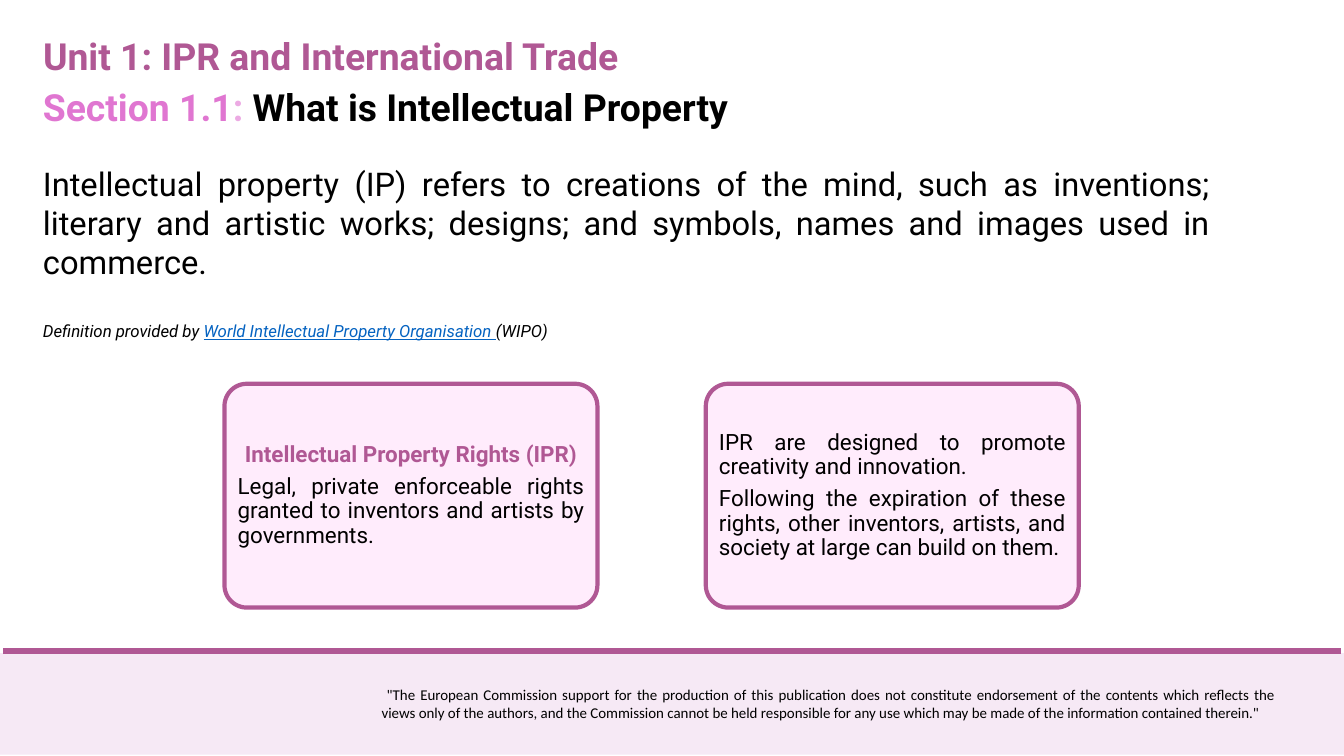
from lxml.etree import SubElement
from pptx import Presentation
from pptx.dml.color import RGBColor
from pptx.enum.shapes import MSO_CONNECTOR, MSO_SHAPE
from pptx.enum.text import MSO_ANCHOR, MSO_AUTO_SIZE, PP_ALIGN
from pptx.oxml.ns import qn
from pptx.util import Pt

BLACK = RGBColor(0x00, 0x00, 0x00)
PLUM = RGBColor(0xB0, 0x58, 0x94)
ORCHID = RGBColor(0xE0, 0x76, 0xD1)
PALE_ORCHID = RGBColor(0xEC, 0xAA, 0xE3)
CARD_PINK = RGBColor(0xFF, 0xEC, 0xFC)
FOOTER_PINK = RGBColor(0xF6, 0xE9, 0xF5)
LINK_BLUE = RGBColor(0x05, 0x63, 0xC1)

LEFT, CENTER, JUSTIFY = PP_ALIGN.LEFT, PP_ALIGN.CENTER, PP_ALIGN.JUSTIFY

SLIDE_WIDTH, SLIDE_HEIGHT = 1440, 810
MARGIN = 38.9

UNIT_TITLE = [
    {"size": 40, "bold": True, "runs": [("Unit 1: IPR and International Trade", PLUM)]},
]
SECTION_TITLE = [
    {"size": 40, "bold": True, "runs": [
        ("Section 1.1", ORCHID),
        (": ", PALE_ORCHID),
        ("What is Intellectual Property", BLACK),
    ]},
]
DEFINITION = [
    {"size": 35, "align": JUSTIFY, "runs": [
        ("Intellectual property (IP) refers to creations of the mind, such as inventions; "
         "literary and artistic works; designs; and symbols, names and images used in commerce.", BLACK),
    ]},
    {"size": 18, "align": JUSTIFY, "italic": True, "before": 42, "runs": [
        ("Definition provided by ", BLACK),
        ("World Intellectual Property Organisation ", LINK_BLUE),
        ("(WIPO)", BLACK),
    ]},
]
DISCLAIMER = [
    {"size": 16, "align": JUSTIFY, "font": "Calibri", "runs": [
        (" \"The European Commission support for the production of this publication does not "
         "constitute endorsement of the contents which reflects the views only of the authors, "
         "and the Commission cannot be held responsible for any use which may be made of the "
         "information contained therein.\"", BLACK),
    ]},
]
CARD_STYLE = {"size": 24, "align": JUSTIFY, "spacing": 0.9, "after": 8.4}
CARDS = [
    [
        {**CARD_STYLE, "align": CENTER, "bold": True,
         "runs": [("Intellectual Property Rights (IPR)", PLUM)]},
        {**CARD_STYLE, "runs": [
            ("Legal, private enforceable rights granted to inventors and artists by governments.", BLACK)]},
    ],
    [
        {**CARD_STYLE, "runs": [("IPR are designed to promote creativity and innovation.", BLACK)]},
        {**CARD_STYLE, "runs": [
            ("Following the expiration of these rights, other inventors, artists, "
             "and society at large can build on them.", BLACK)]},
    ],
]

CARD_LEFT, CARD_TOP, CARD_WIDTH, CARD_HEIGHT, CARD_STEP = 240.5, 411.2, 399.6, 239.8, 515.7
FOOTER_TOP, FOOTER_HEIGHT = 699.8, 108.7
RULE_Y, RULE_INSET = 697.7, 3.6


def write(text_frame, paragraphs, anchor=MSO_ANCHOR.TOP, auto_size=MSO_AUTO_SIZE.SHAPE_TO_FIT_TEXT):
    text_frame.word_wrap = True
    text_frame.auto_size = auto_size
    text_frame.vertical_anchor = anchor
    for index, content in enumerate(paragraphs):
        paragraph = text_frame.add_paragraph() if index else text_frame.paragraphs[0]
        paragraph.alignment = content.get("align", LEFT)
        paragraph.line_spacing = content.get("spacing", 1.0)
        paragraph.space_before = Pt(content.get("before", 0))
        paragraph.space_after = Pt(content.get("after", 0))
        for text, color in content["runs"]:
            run = paragraph.add_run()
            run.text = text
            run.font.name = content.get("font", "Roboto")
            run.font.size = Pt(content["size"])
            run.font.bold = content.get("bold", False)
            run.font.italic = content.get("italic", False)
            run.font.underline = color == LINK_BLUE
            run.font.color.rgb = color


def add_text(slide, left, top, width, height, paragraphs):
    box = slide.shapes.add_textbox(Pt(left), Pt(top), Pt(width), Pt(height))
    write(box.text_frame, paragraphs)


def paint(shape, fill, line=None, line_width=0):
    shape.shadow.inherit = False
    shape.fill.solid()
    shape.fill.fore_color.rgb = fill
    if line is None:
        shape.line.fill.background()
    else:
        shape.line.color.rgb = line
        shape.line.width = Pt(line_width)


def add_footer(slide):
    band = slide.shapes.add_shape(
        MSO_SHAPE.RECTANGLE, 0, Pt(FOOTER_TOP), Pt(SLIDE_WIDTH), Pt(FOOTER_HEIGHT))
    paint(band, FOOTER_PINK)
    rule = slide.shapes.add_connector(
        MSO_CONNECTOR.STRAIGHT, Pt(RULE_INSET), Pt(RULE_Y), Pt(SLIDE_WIDTH - RULE_INSET), Pt(RULE_Y))
    rule.line.color.rgb = PLUM
    rule.line.width = Pt(6.75)
    SubElement(rule._element.spPr, qn("a:effectLst"))
    add_text(slide, 401.8, 730.8, 972, 46, DISCLAIMER)


def add_card(slide, index, paragraphs):
    card = slide.shapes.add_shape(
        MSO_SHAPE.ROUNDED_RECTANGLE, Pt(CARD_LEFT + index * CARD_STEP), Pt(CARD_TOP),
        Pt(CARD_WIDTH), Pt(CARD_HEIGHT))
    card.adjustments[0] = 0.1
    paint(card, CARD_PINK, PLUM, 4.5)
    frame = card.text_frame
    frame.margin_left = frame.margin_right = frame.margin_top = frame.margin_bottom = Pt(7.2)
    write(frame, paragraphs, MSO_ANCHOR.MIDDLE, MSO_AUTO_SIZE.NONE)


def main():
    presentation = Presentation()
    presentation.slide_width, presentation.slide_height = Pt(SLIDE_WIDTH), Pt(SLIDE_HEIGHT)
    slide = presentation.slides.add_slide(presentation.slide_layouts[5])
    title = slide.shapes.title
    title.left, title.top, title.width, title.height = Pt(MARGIN), Pt(31.7), Pt(640), Pt(55.4)
    write(title.text_frame, UNIT_TITLE)
    add_footer(slide)
    add_text(slide, MARGIN, 87.1, 1070.6, 55.4, SECTION_TITLE)
    add_text(slide, MARGIN, 172.1, 1265.8, 198.7, DEFINITION)
    for index, paragraphs in enumerate(CARDS):
        add_card(slide, index, paragraphs)
    presentation.save("out.pptx")


if __name__ == "__main__":
    main()
